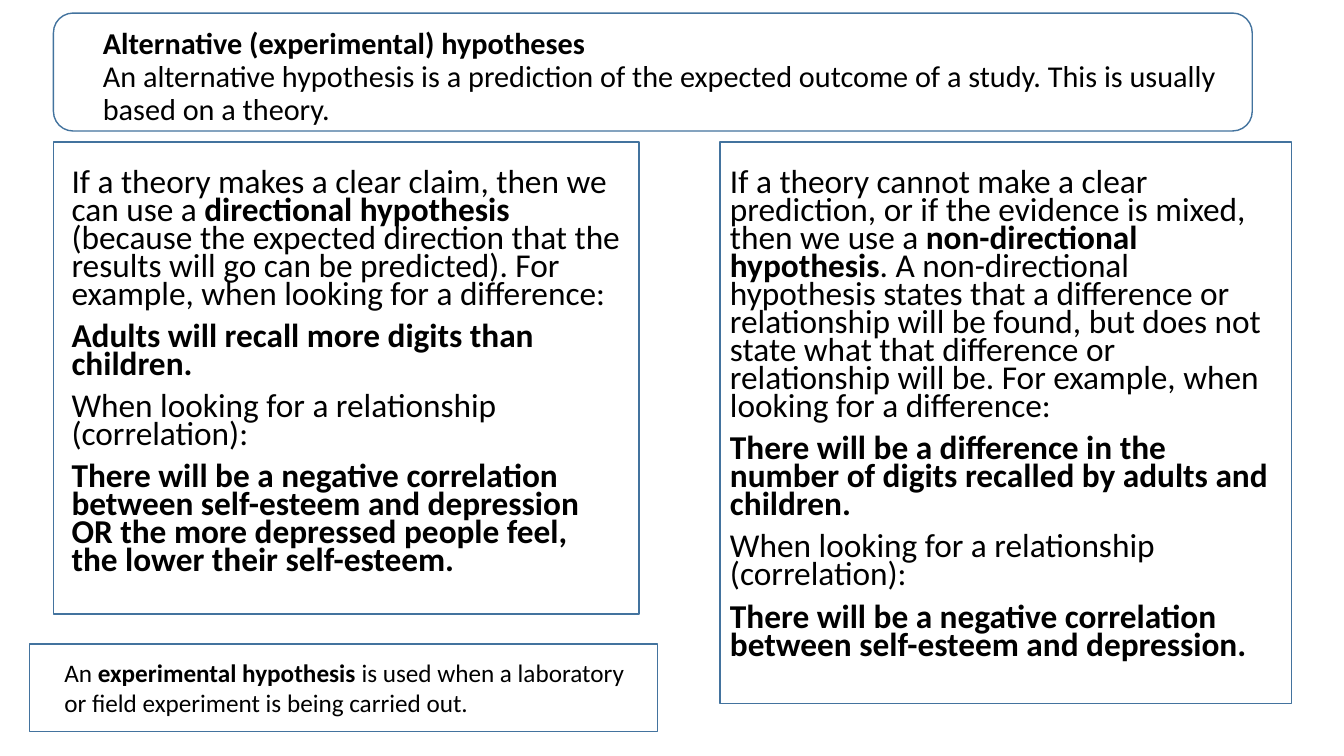
"""Build the slide on directional and non-directional alternative hypotheses."""
from typing import NamedTuple

from lxml import etree
from pptx import Presentation
from pptx.dml.color import RGBColor
from pptx.enum.shapes import MSO_SHAPE
from pptx.enum.text import MSO_ANCHOR, MSO_AUTO_SIZE, PP_ALIGN
from pptx.oxml.ns import qn
from pptx.util import Pt

PX = 9144
FONT = "Calibri"
COLORS = {"text": "000000", "outline": "43739E"}
RECT, ROUNDED = MSO_SHAPE.RECTANGLE, MSO_SHAPE.ROUNDED_RECTANGLE
TOP, MIDDLE = MSO_ANCHOR.TOP, MSO_ANCHOR.MIDDLE
LEFT = PP_ALIGN.LEFT
NO_AUTOFIT = MSO_AUTO_SIZE.NONE
TWO_CONTENT = 3


class Box(NamedTuple):
    """A position and size in px."""
    x: int
    y: int
    w: int
    h: int

    def emu(self):
        """Return the four lengths in EMU."""
        return [v * PX for v in self]


class Span(NamedTuple):
    """A piece of text of one weight."""
    text: str
    bold: bool = False


class Column(NamedTuple):
    """A body text, each paragraph a list of spans."""
    box: Box
    paragraphs: list[list[Span]]


class Frame(NamedTuple):
    """An outlined, unfilled shape."""
    kind: MSO_SHAPE
    box: Box


TITLE_BOX = Box(92, 24, 1150, 106)
TITLE = [
    Span("Alternative (experimental) hypotheses", True),
    Span("An alternative hypothesis is a prediction of the expected outcome of a study. "
         "This is usually based on a theory."),
]
CORRELATION = [Span("When looking for a relationship (correlation):")]
COLUMNS = [
    Column(Box(61, 165, 564, 503), [
        [Span("If a theory makes a clear claim, then we can use a "),
         Span("directional hypothesis ", True),
         Span("(because the expected direction that the results will go can be predicted). "
              "For example, when looking for a difference:")],
        [Span("Adults will recall more digits than children.", True)],
        CORRELATION,
        [Span("There will be a negative correlation between self-esteem and depression OR "
              "the more depressed people feel, the lower their self-esteem.", True)],
    ]),
    Column(Box(714, 165, 567, 533), [
        [Span("If a theory cannot make a clear prediction, or if the evidence is mixed, "
              "then we use a "),
         Span("non-directional hypothesis", True),
         Span(". A non-directional hypothesis states that a difference or relationship will "
              "be found, but does not state what that difference or relationship will be. "
              "For example, when looking for a difference:")],
        [Span("There will be a difference in the number of digits recalled by adults and "
              "children.", True)],
        CORRELATION,
        [Span("There will be a negative correlation between self-esteem and depression.", True)],
    ]),
]
FRAMES = [
    Frame(ROUNDED, Box(53, 13, 1189, 117)),
    Frame(RECT, Box(53, 141, 581, 468)),
    Frame(RECT, Box(714, 141, 567, 557)),
    Frame(RECT, Box(29, 639, 623, 87)),
]
NOTE = Column(Box(54, 647, 667, 71), [
    [Span("An "), Span("experimental hypothesis ", True), Span("is used when a laboratory")],
    [Span("or field experiment is being carried out.")],
])


def place(shape, box: Box) -> None:
    """Move and size a shape."""
    shape.left, shape.top, shape.width, shape.height = box.emu()


def setup(tf, anchor: MSO_ANCHOR) -> None:
    """Give a text frame wrapping, fixed size and an anchor."""
    tf.word_wrap = True
    tf.auto_size = NO_AUTOFIT
    tf.vertical_anchor = anchor


def style(r, size: float, bold: bool) -> None:
    """Format one run."""
    r.font.name = FONT
    r.font.size = Pt(size)
    r.font.bold = bold
    r.font.color.rgb = RGBColor.from_string(COLORS["text"])


def remove_bullet(p) -> None:
    """Clear the bullet and indent of a paragraph."""
    pPr = p._p.get_or_add_pPr()
    pPr.set("marL", "0")
    pPr.set("indent", "0")
    etree.SubElement(pPr, qn("a:buNone"))


def write(tf, paragraphs: list[list[Span]], size: float) -> None:
    """Fill a text frame with paragraphs of styled spans."""
    for i, spans in enumerate(paragraphs):
        p = tf.add_paragraph() if i else tf.paragraphs[0]
        p.alignment = LEFT
        for span in spans:
            r = p.add_run()
            r.text = span.text
            style(r, size, span.bold)


def add_title(s) -> None:
    """Fill the title placeholder."""
    place(s.shapes.title, TITLE_BOX)
    tf = s.shapes.title.text_frame
    setup(tf, MIDDLE)
    p = tf.paragraphs[0]
    p.text = "\v".join(span.text for span in TITLE)
    p.alignment = LEFT
    p.line_spacing = 0.9
    for r, span in zip(p.runs, TITLE):
        style(r, 21.6, span.bold)


def add_column(placeholder, column: Column) -> None:
    """Fill a body placeholder with tightly set paragraphs."""
    place(placeholder, column.box)
    tf = placeholder.text_frame
    setup(tf, TOP)
    write(tf, column.paragraphs, 23.8)
    for p in tf.paragraphs:
        p.line_spacing = 0.7
        p.space_before = Pt(10)
        remove_bullet(p)


def add_frame(s, frame: Frame) -> None:
    """Draw an outline."""
    sp = s.shapes.add_shape(frame.kind, *frame.box.emu())
    sp.shadow.inherit = False
    sp.fill.background()
    sp.line.color.rgb = RGBColor.from_string(COLORS["outline"])
    sp.line.width = Pt(1)


def add_note(s, note: Column) -> None:
    """Add the text box at the bottom."""
    tf = s.shapes.add_textbox(*note.box.emu()).text_frame
    setup(tf, TOP)
    write(tf, note.paragraphs, 18)


def main() -> None:
    """Build and save the presentation."""
    prs = Presentation()
    prs.slide_width, prs.slide_height = 1333 * PX, 750 * PX
    s = prs.slides.add_slide(prs.slide_layouts[TWO_CONTENT])
    add_title(s)
    for placeholder, column in zip(list(s.placeholders)[1:], COLUMNS):
        add_column(placeholder, column)
    for frame in FRAMES:
        add_frame(s, frame)
    add_note(s, NOTE)
    prs.save("out.pptx")


if __name__ == "__main__":
    main()
